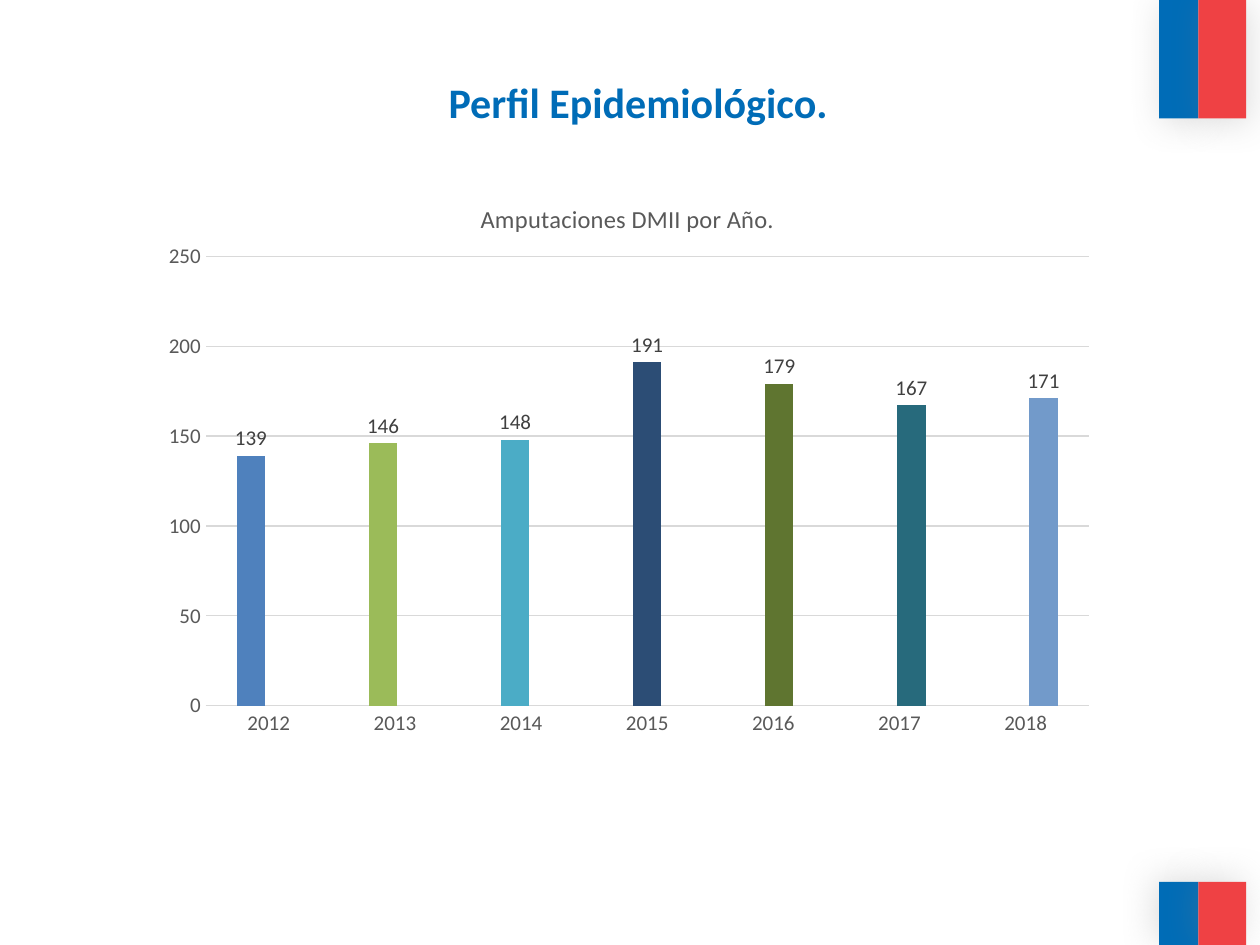
from lxml.etree import SubElement
from pptx import Presentation
from pptx.chart.data import CategoryChartData
from pptx.dml.color import RGBColor
from pptx.enum.chart import XL_CHART_TYPE as ChartType, XL_LABEL_POSITION as LabelPosition
from pptx.enum.chart import XL_TICK_MARK as TickMark
from pptx.enum.shapes import MSO_SHAPE as Shape
from pptx.enum.text import MSO_ANCHOR as Anchor, PP_ALIGN as Align
from pptx.oxml import parse_xml
from pptx.oxml.ns import nsdecls, qn
from pptx.util import Inches, Pt

WIDTH, HEIGHT = Inches(10), Inches(7.5)
FONT = "Calibri"
BLUE, RED, GREY, RULE = "006CB7", "EF4144", "595959", "D9D9D9"
AMPUTATIONS = [
    ("2012", 139, "4F81BD"),
    ("2013", 146, "9BBB59"),
    ("2014", 148, "4BACC6"),
    ("2015", 191, "2C4D75"),
    ("2016", 179, "5F7530"),
    ("2017", 167, "276A7C"),
    ("2018", 171, "729ACA"),
]


def colour(hex_text):
    """Turn a hex string into a colour."""
    return RGBColor.from_string(hex_text)


def share(left, top, width, height):
    """Turn percentages of the slide into a box."""
    return (int(WIDTH * left / 100), int(HEIGHT * top / 100),
            int(WIDTH * width / 100), int(HEIGHT * height / 100))


def style(font, size, hex_text, bold=False):
    """Set the face, size, colour and weight of a font."""
    font.name, font.size, font.bold = FONT, Pt(size), bold
    font.color.rgb = colour(hex_text)


def add_shadow(shape, angle):
    """Give a shape a soft grey shadow in one direction."""
    shape.shadow.inherit = False
    effects = shape._element.spPr.find(qn("a:effectLst"))
    effects.append(parse_xml(
        f'<a:outerShdw {nsdecls("a")} blurRad="{Pt(20)}" dist="{Pt(3)}" dir="{angle * 60000}" '
        'rotWithShape="0"><a:srgbClr val="808080"><a:alpha val="25000"/></a:srgbClr>'
        '</a:outerShdw>'))


def add_flag(page, box, angle):
    """Draw a blue and red band that fills the box."""
    left, top, width, height = box
    blue_width = int(width * 0.45)
    for start, span_width, fill in ((left, blue_width, BLUE),
                                    (left + blue_width, width - blue_width, RED)):
        band = page.shapes.add_shape(Shape.RECTANGLE, start, top, span_width, height)
        band.fill.solid()
        band.fill.fore_color.rgb = colour(fill)
        band.line.fill.background()
        add_shadow(band, angle)


def add_heading(page, box, text):
    """Place the slide title in the box."""
    title = page.shapes.title
    title.left, title.top, title.width, title.height = box
    frame = title.text_frame
    frame.word_wrap = True
    frame.vertical_anchor = Anchor.MIDDLE
    para = frame.paragraphs[0]
    para.alignment = Align.CENTER
    span = para.add_run()
    span.text = text
    style(span.font, 24, BLUE, bold=True)


def set_plot_layout(chart, **shares):
    """Fix the inner plot area as shares of the chart."""
    plot_area = chart._chartSpace.chart.plotArea
    for old in plot_area.findall(qn("c:layout")):
        plot_area.remove(old)
    layout = parse_xml(f'<c:layout {nsdecls("c")}/>')
    manual = SubElement(layout, qn("c:manualLayout"))
    settings = {"layoutTarget": "inner", "xMode": "edge", "yMode": "edge", **shares}
    for name, value in settings.items():
        SubElement(manual, qn(f"c:{name}")).set("val", str(value))
    plot_area.insert(0, layout)


def format_axes(chart):
    """Style both axes and the gridlines."""
    for axis in (chart.category_axis, chart.value_axis):
        axis.major_tick_mark = axis.minor_tick_mark = TickMark.NONE
        style(axis.tick_labels.font, 12, GREY)
    values = chart.value_axis
    values.minimum_scale, values.maximum_scale, values.major_unit = 0, 250, 50
    values.format.line.fill.background()
    for line in (chart.category_axis.format.line, values.major_gridlines.format.line):
        line.color.rgb = colour(RULE)
        line.width = Pt(0.75)


def format_series(series, fill):
    """Colour one series and show its value above the bar."""
    series.format.fill.solid()
    series.format.fill.fore_color.rgb = colour(fill)
    series.invert_if_negative = False
    labels = series.data_labels
    labels.show_value = True
    labels.position = LabelPosition.OUTSIDE_END
    style(labels.font, 12, "404040")


def add_year_chart(page, box, heading, rows):
    """Draw a column chart with one series for each year."""
    data = CategoryChartData()
    data.categories = [year for year, _, _ in rows]
    for index, (_, value, _) in enumerate(rows):
        data.add_series(f"Series {index + 1}",
                        [value if place == index else None for place in range(len(rows))])
    chart = page.shapes.add_chart(ChartType.COLUMN_CLUSTERED, *box, data).chart
    style(chart.font, 10, "000000")
    chart.has_legend = False
    chart.has_title = True
    span = chart.chart_title.text_frame.paragraphs[0].add_run()
    span.text = heading
    style(span.font, 14, GREY)
    chart.chart_title.include_in_layout = False
    plot = chart.plots[0]
    plot.gap_width, plot.overlap, plot.vary_by_categories = 219, 79, False
    for series, (_, _, fill) in zip(plot.series, rows):
        format_series(series, fill)
    format_axes(chart)
    set_plot_layout(chart, x=0.063, y=0.125, w=0.915, h=0.725)


def main():
    """Build the slide and save the deck."""
    deck = Presentation()
    deck.slide_width, deck.slide_height = WIDTH, HEIGHT
    page = deck.slides.add_slide(deck.slide_layouts[5])
    add_flag(page, share(92, 0, 6.9, 12.53), 45)
    add_flag(page, share(92, 93.33, 6.9, 6.67), 215)
    add_heading(page, share(6, 6.93, 89.3, 7.73), "Perfil Epidemiológico.")
    add_year_chart(page, share(11.5, 18.93, 76.6, 65.6), "Amputaciones DMII por Año.", AMPUTATIONS)
    deck.save("out.pptx")


if __name__ == "__main__":
    main()
